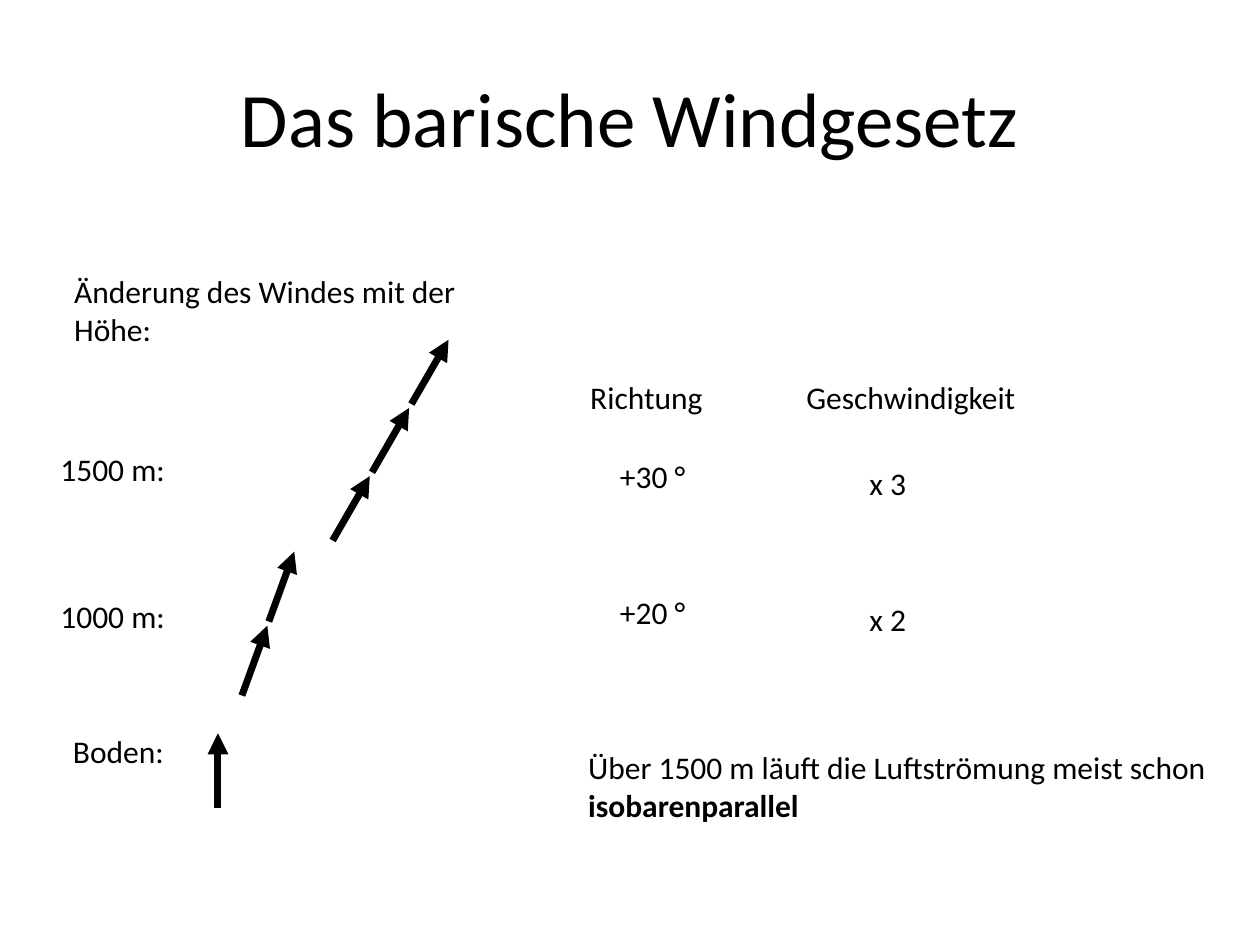
from math import cos, radians, sin

from lxml.etree import SubElement
from pptx import Presentation
from pptx.dml.color import RGBColor
from pptx.enum.shapes import MSO_CONNECTOR as Connector
from pptx.enum.text import MSO_ANCHOR as Anchor, MSO_AUTO_SIZE as AutoSize, PP_ALIGN as Align
from pptx.oxml.ns import qn
from pptx.util import Inches, Pt

BLACK = "000000"
FONT = "Calibri"
ARROW_LENGTH = 0.59
ARROW_PITCH = 0.625


def color(value):
    return RGBColor.from_string(value)


def add_span(para, text, size=18, bold=False):
    span = para.add_run()
    span.text = text
    span.font.name = FONT
    span.font.size = Pt(size)
    span.font.bold = bold
    span.font.color.rgb = color(BLACK)


def add_title(slide, text):
    title = slide.shapes.title
    title.left, title.top = Inches(0.5), Inches(0.3)
    title.width, title.height = Inches(9), Inches(1.25)
    title.text_frame.vertical_anchor = Anchor.MIDDLE
    para = title.text_frame.paragraphs[0]
    para.alignment = Align.CENTER
    add_span(para, text, size=44)


def add_text(slide, text, left, top, width, height=0.4, align=Align.CENTER,
             wrap=False, anchor=Anchor.TOP, bold_end=""):
    box = slide.shapes.add_textbox(Inches(left), Inches(top), Inches(width), Inches(height))
    frame = box.text_frame
    frame.word_wrap = wrap
    frame.auto_size = AutoSize.SHAPE_TO_FIT_TEXT
    frame.vertical_anchor = anchor
    para = frame.paragraphs[0]
    para.alignment = align
    add_span(para, text)
    if bold_end:
        add_span(para, bold_end, bold=True)


def add_arrow(slide, x, y, end_x, end_y):
    arrow = slide.shapes.add_connector(
        Connector.STRAIGHT, Inches(x), Inches(y), Inches(end_x), Inches(end_y))
    arrow.line.color.rgb = color(BLACK)
    arrow.line.width = Pt(4)
    SubElement(arrow.line._get_or_add_ln(), qn("a:tailEnd"), type="triangle")
    SubElement(arrow._element.spPr, qn("a:effectLst"))


def add_wind(slide, x, y, bearing, speed):
    """Chain one arrow per unit of speed, turned clockwise from straight up."""
    across, up = sin(radians(bearing)), cos(radians(bearing))
    for step in range(speed):
        start_x = x + step * ARROW_PITCH * across
        start_y = y - step * ARROW_PITCH * up
        add_arrow(slide, start_x, start_y,
                  start_x + ARROW_LENGTH * across, start_y - ARROW_LENGTH * up)


def main():
    deck = Presentation()
    deck.slide_width, deck.slide_height = Inches(10), Inches(7.5)
    slide = deck.slides.add_slide(deck.slide_layouts[5])

    add_title(slide, "Das barische Windgesetz")
    add_text(slide, "Änderung des Windes mit der Höhe:", 0.49, 2.11, 3.85, 0.7,
             align=Align.LEFT, wrap=True)

    add_text(slide, "Boden:", 0.48, 5.76, 0.92)
    add_text(slide, "Richtung", 4.57, 2.95, 1.12)
    add_text(slide, "Geschwindigkeit", 6.28, 2.95, 1.9)
    for height, label_top, value_top, bearing, speed in (
            ("1000 m:", 4.69, 4.66, 20, 2),
            ("1500 m:", 3.52, 3.58, 30, 3)):
        add_text(slide, height, 0.38, label_top, 1.03)
        add_text(slide, f"+{bearing} °", 4.8, value_top, 0.76)
        add_text(slide, f"x {speed}", 6.79, value_top + 0.05, 0.51)

    for x, y, bearing, speed in ((1.73, 6.41, 0, 1), (1.92, 5.52, 20, 2), (2.64, 4.29, 30, 3)):
        add_wind(slide, x, y, bearing, speed)

    add_text(slide, "Über 1500 m läuft die Luftströmung meist schon ", 4.57, 5.89, 5.2, 0.7,
             align=Align.LEFT, wrap=True, anchor=Anchor.MIDDLE, bold_end="isobarenparallel")

    deck.save("out.pptx")


if __name__ == "__main__":
    main()
